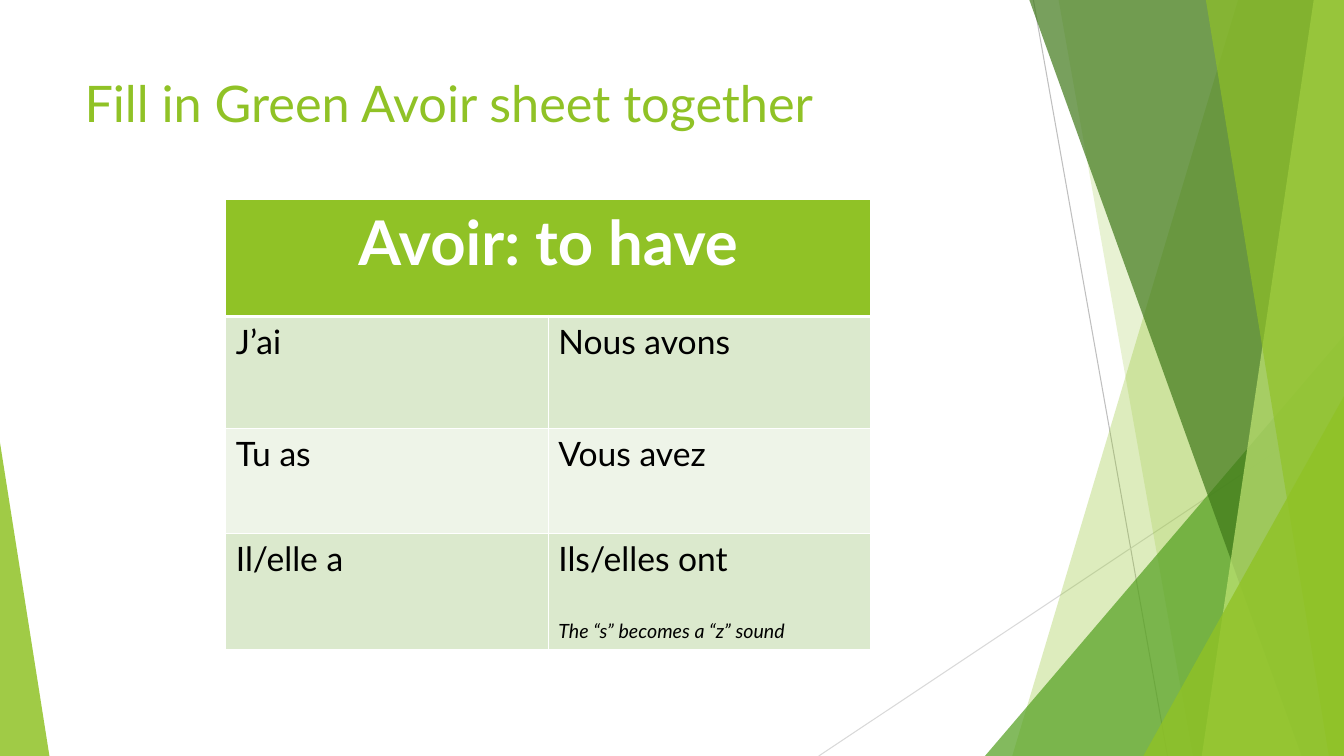
from dataclasses import dataclass

from lxml.etree import SubElement
from pptx import Presentation
from pptx.dml.color import RGBColor
from pptx.enum.shapes import MSO_CONNECTOR, MSO_SHAPE
from pptx.enum.text import MSO_ANCHOR, PP_ALIGN
from pptx.oxml import parse_xml
from pptx.oxml.ns import nsdecls, qn
from pptx.util import Inches, Pt


@dataclass(frozen=True)
class Theme:
    font: str = "Lato"
    green: str = "90C226"
    leaf: str = "54A021"
    forest: str = "3F7819"
    lime: str = "C0E474"
    gray: str = "BFBFBF"
    pale: str = "D9D9D9"
    white: str = "FFFFFF"
    black: str = "000000"
    bands: tuple = ("DBE9CD", "EEF4E8")
    title: int = 36
    head: int = 44
    body: int = 24
    note: int = 14


def write(para, text, size, color, font, bold=False, italic=False,
          align=PP_ALIGN.LEFT, before=0):
    para.alignment = align
    para.space_before = Pt(before)
    run = para.add_run()
    run.text = text
    face = run.font
    face.name, face.size = font, Pt(size)
    face.bold, face.italic = bold, italic
    face.color.rgb = RGBColor.from_string(color)


def edge(cell, color, top, base):
    """Draw the four borders of a cell, ahead of its fill in the XML."""
    props = cell._tc.get_or_add_tcPr()
    widths = {"L": 1, "R": 1, "T": top, "B": base}
    for spot, (side, width) in enumerate(widths.items()):
        props.insert(spot, parse_xml(
            f'<a:ln{side} {nsdecls("a")} w="{Pt(width)}"><a:solidFill>'
            f'<a:srgbClr val="{color}"/></a:solidFill></a:ln{side}>'))


class Page:
    """One slide; every length is a percentage of its width or height."""

    def __init__(self, deck, theme):
        self.theme = theme
        self.wide, self.high = deck.slide_width, deck.slide_height
        self.shapes = deck.slides.add_slide(deck.slide_layouts[6]).shapes

    def x(self, share):
        return round(self.wide * share / 100)

    def y(self, share):
        return round(self.high * share / 100)

    def box(self, left, top, width, height):
        return self.x(left), self.y(top), self.x(width), self.y(height)

    def line(self, start, end, color):
        rule = self.shapes.add_connector(
            MSO_CONNECTOR.STRAIGHT, self.x(start[0]), self.y(start[1]),
            self.x(end[0]), self.y(end[1]))
        rule.line.color.rgb = RGBColor.from_string(color)
        rule.line.width = Pt(0.75)
        SubElement(rule._element.spPr, qn("a:effectLst"))

    def paint(self, shape, color, alpha):
        shape.shadow.inherit = False
        shape.line.fill.background()
        shape.fill.solid()
        shape.fill.fore_color.rgb = RGBColor.from_string(color)
        tone = shape._element.spPr.find(qn("a:solidFill"))[0]
        SubElement(tone, qn("a:alpha")).set("val", str(alpha * 1000))

    def blade(self, top, foot, color, alpha):
        """Fill from a slanted left edge to the right side of the slide."""
        pen = self.shapes.build_freeform(self.x(top), 0)
        pen.add_line_segments([(self.wide, 0), (self.wide, self.high),
                               (self.x(foot), self.high)])
        self.paint(pen.convert_to_shape(), color, alpha)

    def wedge(self, left, top, width, peak, color, alpha):
        """Stand a triangle on the foot of the slide."""
        shape = self.shapes.add_shape(
            MSO_SHAPE.ISOSCELES_TRIANGLE,
            *self.box(left, top, width, 100 - top))
        shape.adjustments[0] = peak
        self.paint(shape, color, alpha)

    def title(self, text, *area):
        frame = self.shapes.add_textbox(*self.box(*area)).text_frame
        frame.word_wrap = True
        frame.vertical_anchor = MSO_ANCHOR.TOP
        write(frame.paragraphs[0], text, self.theme.title,
              self.theme.green, self.theme.font)

    def table(self, head, body, note, left, top, width, rows):
        look = self.theme
        grid = self.shapes.add_table(
            len(rows), 2, *self.box(left, top, width, sum(rows))).table
        grid.first_row = grid.horz_banding = False
        for row, share in zip(grid.rows, rows):
            row.height = self.y(share)
        grid.cell(0, 0).merge(grid.cell(0, 1))
        for r in range(len(rows)):
            fill = look.bands[(r - 1) % 2] if r else look.green
            for c in range(2):
                cell = grid.cell(r, c)
                cell.fill.solid()
                cell.fill.fore_color.rgb = RGBColor.from_string(fill)
                edge(cell, look.white, 3 if r == 1 else 1, 1 if r else 3)
                if r:
                    write(cell.text_frame.paragraphs[0], body[r - 1][c],
                          look.body, look.black, look.font)
        write(grid.cell(0, 0).text_frame.paragraphs[0], head, look.head,
              look.white, look.font, bold=True, align=PP_ALIGN.CENTER)
        write(cell.text_frame.add_paragraph(), note, look.note, look.black,
              look.font, italic=True, before=look.body * 1.2)


def main():
    deck = Presentation()
    deck.slide_width, deck.slide_height = Inches(13.33), Inches(7.5)
    look = Theme()
    page = Page(deck, look)

    page.line((76.89, 0), (86.87, 100), look.gray)
    page.line((100, 53.73), (60.92, 100), look.pale)
    page.blade(92.12, 75.32, look.green, 30)
    page.blade(78.77, 88.75, look.green, 20)
    page.wedge(73.29, 44.4, 26.71, 1, look.leaf, 72)
    page.blade(76.59, 96.85, look.forest, 70)
    page.blade(97.75, 89.42, look.lime, 70)
    page.blade(89.72, 98.87, look.green, 65)
    page.wedge(85.07, 52.4, 14.93, 1, look.green, 80)
    page.wedge(0, 58.53, 3.68, 0, look.green, 85)

    page.title("Fill in Green Avoir sheet together", 5.55, 8.93, 70.52, 19.2)
    page.table(
        "Avoir: to have",
        [("J’ai", "Nous avons"), ("Tu as", "Vous avez"),
         ("Il/elle a", "Ils/elles ont")],
        "The “s” becomes a “z” sound",
        16.8, 26.4, 48, (15.47, 14.8, 13.87, 15.33))
    deck.save("out.pptx")


if __name__ == "__main__":
    main()
